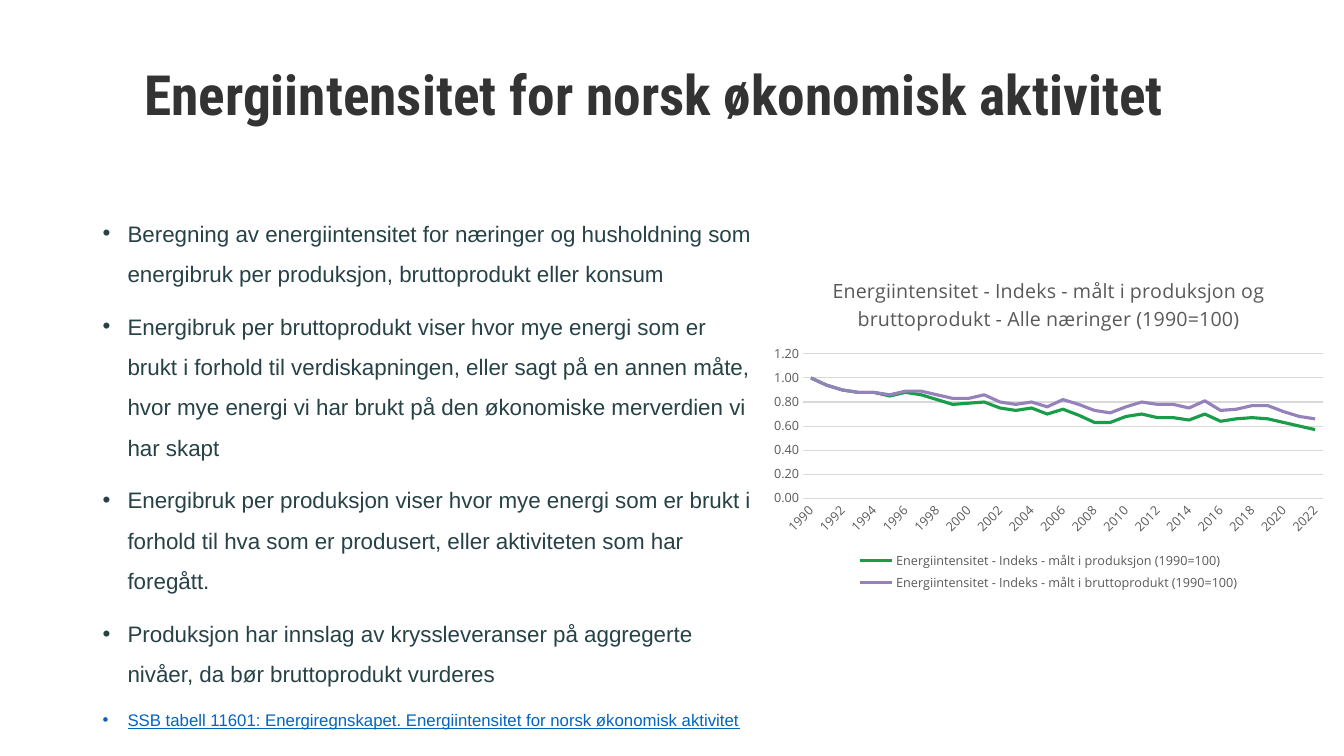
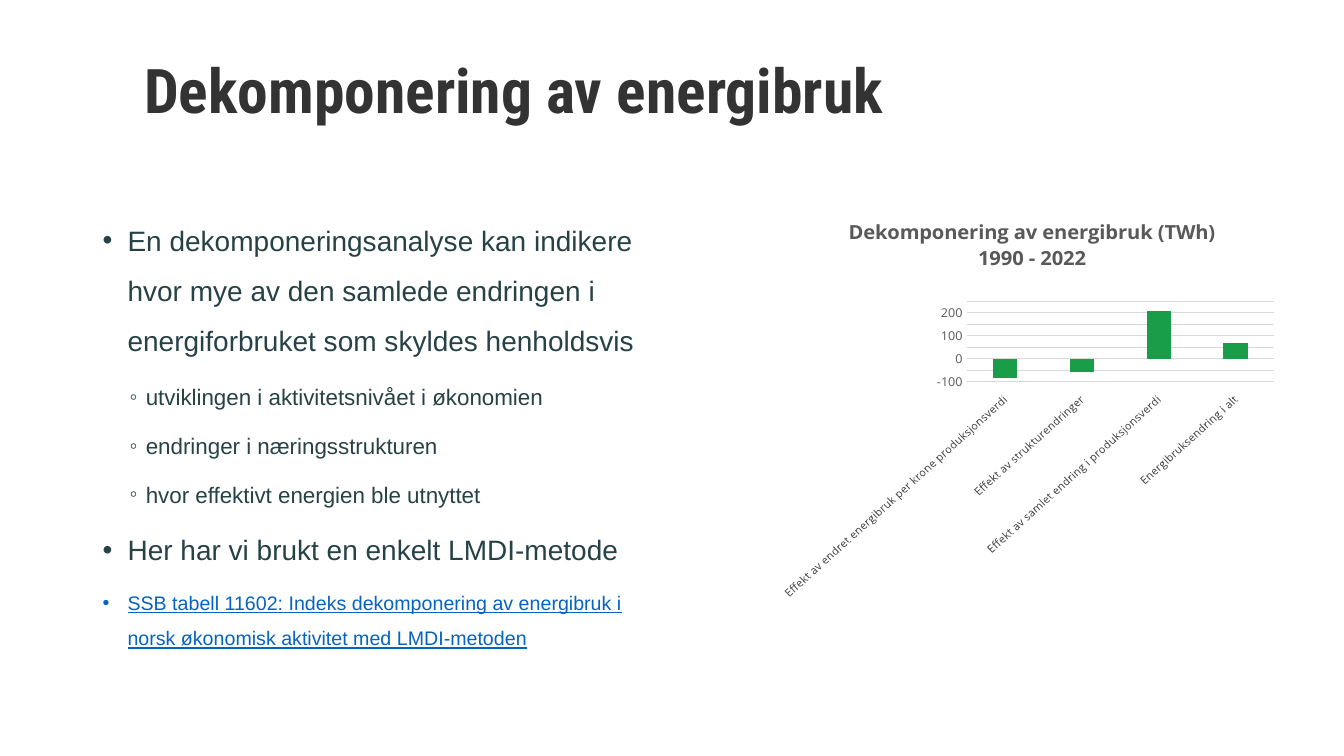
from dataclasses import dataclass

from lxml import etree
from pptx import Presentation
from pptx.chart.axis import _BaseAxis
from pptx.chart.chart import Chart
from pptx.chart.data import CategoryChartData
from pptx.dml.color import RGBColor
from pptx.enum.chart import XL_CHART_TYPE, XL_LEGEND_POSITION, XL_TICK_LABEL_POSITION, XL_TICK_MARK
from pptx.enum.text import MSO_ANCHOR, MSO_AUTO_SIZE, PP_ALIGN
from pptx.oxml.ns import qn
from pptx.slide import Slide
from pptx.util import Cm, Pt

LINE = XL_CHART_TYPE.LINE
COLUMN = XL_CHART_TYPE.COLUMN_CLUSTERED
BOTTOM = XL_LEGEND_POSITION.BOTTOM
LABELS_LOW = XL_TICK_LABEL_POSITION.LOW
LABELS_NEXT = XL_TICK_LABEL_POSITION.NEXT_TO_AXIS
NO_TICK = XL_TICK_MARK.NONE
TOP = MSO_ANCHOR.TOP
NO_FIT = MSO_AUTO_SIZE.NONE
LEFT = PP_ALIGN.LEFT

TITLE_FONT, BODY_FONT, CHART_FONT = "Roboto Condensed", "Arial", "Open Sans"
TITLE_INK, BODY_INK, LINK_INK = "333333", "274247", "0563C1"
CHART_INK, GRID_INK = "595959", "D9D9D9"
GREEN, PURPLE = "1A9D49", "9582BB"
DEGREE = 60000

Box = tuple[float, float, float, float]


@dataclass(frozen=True)
class Level:
    bullet: str
    margin: float
    hanging: float
    after: int


@dataclass(frozen=True)
class Point:
    text: str
    size: int
    level: int = 0
    link: bool = False


@dataclass(frozen=True)
class Series:
    name: str
    values: tuple[float, ...]
    ink: str


@dataclass(frozen=True)
class Figure:
    kind: int
    box: Box
    plot: Box
    title: tuple[str, ...]
    title_size: float
    categories: tuple[str, ...]
    series: tuple[Series, ...]
    scale: tuple[float, float, float]
    number_format: str
    category_size: int
    category_angle: int
    category_position: int
    title_bold: bool = False


@dataclass(frozen=True)
class Page:
    title: str
    title_size: float
    title_inset: float
    body_width: float
    points: tuple[Point, ...]
    figure: Figure


LEVELS = (Level("•", 0.63, 0.63, 9), Level("◦", 1.09, 0.41, 6))

PAGES = (
    Page(
        "Energiintensitet for norsk økonomisk aktivitet", 39.6, 0.18, 17.09,
        (
            Point("Beregning av energiintensitet for næringer og husholdning som energibruk per "
                  "produksjon, bruttoprodukt eller konsum", 16),
            Point("Energibruk per bruttoprodukt viser hvor mye energi som er brukt i forhold til "
                  "verdiskapningen, eller sagt på en annen måte, hvor mye energi vi har brukt på den "
                  "økonomiske merverdien vi har skapt", 16),
            Point("Energibruk per produksjon viser hvor mye energi som er brukt i forhold til hva som "
                  "er produsert, eller aktiviteten som har foregått.", 16),
            Point("Produksjon har innslag av kryssleveranser på aggregerte nivåer, da bør "
                  "bruttoprodukt vurderes", 16),
            Point("SSB tabell 11601: Energiregnskapet. Energiintensitet for norsk økonomisk aktivitet",
                  12, link=True),
        ),
        Figure(
            LINE, (19.23, 6.55, 14.4, 8.46), (0.07, 0.28, 0.91, 0.43),
            ("Energiintensitet - Indeks - målt i produksjon og bruttoprodukt - Alle næringer (1990=100)",),
            14, tuple(str(year) for year in range(1990, 2023)),
            (
                Series("Energiintensitet - Indeks - målt i produksjon (1990=100)",
                       (1, 0.94, 0.9, 0.88, 0.88, 0.85, 0.88, 0.86, 0.82, 0.78, 0.79, 0.8, 0.75, 0.73,
                        0.75, 0.7, 0.74, 0.69, 0.63, 0.63, 0.68, 0.7, 0.67, 0.67, 0.65, 0.7, 0.64,
                        0.66, 0.67, 0.66, 0.63, 0.6, 0.57), GREEN),
                Series("Energiintensitet - Indeks - målt i bruttoprodukt (1990=100)",
                       (1, 0.94, 0.9, 0.88, 0.88, 0.86, 0.89, 0.89, 0.86, 0.83, 0.83, 0.86, 0.8, 0.78,
                        0.8, 0.76, 0.82, 0.78, 0.73, 0.71, 0.76, 0.8, 0.78, 0.78, 0.75, 0.81, 0.73,
                        0.74, 0.77, 0.77, 0.72, 0.68, 0.66), PURPLE),
            ),
            (0, 1.2, 0.2), "0.00", 9, -45, LABELS_NEXT,
        ),
    ),
    Page(
        "Dekomponering av energibruk", 44, 0, 14.4,
        (
            Point("En dekomponeringsanalyse kan indikere hvor mye av den samlede endringen i "
                  "energiforbruket som skyldes henholdsvis", 20),
            Point("utviklingen i aktivitetsnivået i økonomien", 16, 1),
            Point("endringer i næringsstrukturen", 16, 1),
            Point("hvor effektivt energien ble utnyttet", 16, 1),
            Point("Her har vi brukt en enkelt LMDI-metode", 20),
            Point("SSB tabell 11602: Indeks dekomponering av energibruk i norsk økonomisk aktivitet "
                  "med LMDI-metoden", 14, link=True),
        ),
        Figure(
            COLUMN, (19.66, 5.08, 12.7, 10.03), (0.37, 0.26, 0.61, 0.21),
            ("Dekomponering av energibruk (TWh)", "1990 - 2022"), 14.4,
            ("Effekt av endret energibruk per krone produksjonsverdi", "Effekt av strukturendringer",
             "Effekt av samlet endring i produksjonsverdi", "Energibruksendring i alt"),
            (Series("Series 1", (-83, -58, 210, 68), GREEN),),
            (-100, 250, 50), "0", 8, -43, LABELS_LOW, True,
        ),
    ),
)


def color(value: str) -> RGBColor:
    return RGBColor.from_string(value)


def style_font(font, *, name: str, size: float, ink: str, bold: bool = False,
               underline: bool = False) -> None:
    font.name, font.size, font.bold, font.underline = name, Pt(size), bold, underline
    font.color.rgb = color(ink)


def write(paragraph, text: str, **style) -> None:
    run = paragraph.add_run()
    run.text = text
    style_font(run.font, **style)


def place(shape, box: Box) -> None:
    shape.left, shape.top, shape.width, shape.height = map(Cm, box)


def add_bullet(paragraph, level: Level) -> None:
    properties = paragraph._p.get_or_add_pPr()
    properties.set("marL", str(Cm(level.margin)))
    properties.set("indent", str(-Cm(level.hanging)))
    etree.SubElement(properties, qn("a:buChar")).set("char", level.bullet)


def prepare(placeholder, box: Box):
    place(placeholder, box)
    frame = placeholder.text_frame
    frame.word_wrap, frame.auto_size, frame.vertical_anchor = True, NO_FIT, TOP
    return frame


def add_title(slide: Slide, page: Page) -> None:
    frame = prepare(slide.shapes.title, (3.38, 1.52, 26.82, 3.63))
    frame.margin_top = Cm(page.title_inset)
    heading = frame.paragraphs[0]
    heading.alignment, heading.line_spacing = LEFT, 0.9
    write(heading, page.title, name=TITLE_FONT, size=page.title_size, ink=TITLE_INK, bold=True)


def add_points(slide: Slide, page: Page) -> None:
    frame = prepare(slide.placeholders[1], (2.33, 5.07, page.body_width, 11.4))
    for index, point in enumerate(page.points):
        paragraph = frame.add_paragraph() if index else frame.paragraphs[0]
        level = LEVELS[point.level]
        paragraph.level = point.level
        add_bullet(paragraph, level)
        paragraph.line_spacing = 1.5
        paragraph.space_before, paragraph.space_after = Pt(0), Pt(level.after)
        write(paragraph, point.text, name=BODY_FONT, size=point.size,
              ink=LINK_INK if point.link else BODY_INK, underline=point.link)


def fix_plot(chart: Chart, plot: Box) -> None:
    area = chart.element.xpath("c:chart/c:plotArea")[0]
    for previous in area.findall(qn("c:layout")):
        area.remove(previous)
    layout = etree.Element(qn("c:layout"))
    area.insert(0, layout)
    manual = etree.SubElement(layout, qn("c:manualLayout"))
    settings = (("layoutTarget", "inner"), ("xMode", "edge"), ("yMode", "edge"),
                *zip("xywh", map(str, plot)))
    for tag, value in settings:
        etree.SubElement(manual, qn(f"c:{tag}")).set("val", value)


def style_axis(axis: _BaseAxis, size: int) -> None:
    axis.major_tick_mark = axis.minor_tick_mark = NO_TICK
    style_font(axis.tick_labels.font, name=CHART_FONT, size=size, ink=CHART_INK)


def style_line(line, ink: str, width: float) -> None:
    line.color.rgb, line.width = color(ink), Pt(width)


def style_axes(chart: Chart, figure: Figure) -> None:
    categories, values = chart.category_axis, chart.value_axis
    style_axis(categories, figure.category_size)
    style_axis(values, 9)
    categories.has_major_gridlines = False
    categories.tick_label_position = figure.category_position
    style_line(categories.format.line, GRID_INK, 0.75)
    label_body = chart.element.xpath(".//c:catAx/c:txPr/a:bodyPr")[0]
    label_body.set("rot", str(figure.category_angle * DEGREE))
    values.minimum_scale, values.maximum_scale, values.major_unit = figure.scale
    values.has_major_gridlines = True
    style_line(values.major_gridlines.format.line, GRID_INK, 0.75)
    values.format.line.fill.background()
    values.tick_labels.number_format = figure.number_format
    values.tick_labels.number_format_is_linked = False


def add_figure(slide: Slide, figure: Figure) -> None:
    data = CategoryChartData(number_format=figure.number_format)
    data.categories = figure.categories
    for series in figure.series:
        data.add_series(series.name, series.values)
    chart = slide.shapes.add_chart(figure.kind, *map(Cm, figure.box), data).chart
    style_font(chart.font, name=CHART_FONT, size=10, ink="000000")
    chart.has_title = True
    frame = chart.chart_title.text_frame
    for index, text in enumerate(figure.title):
        paragraph = frame.add_paragraph() if index else frame.paragraphs[0]
        write(paragraph, text, name=CHART_FONT, size=figure.title_size, ink=CHART_INK,
              bold=figure.title_bold)
    style_axes(chart, figure)
    fix_plot(chart, figure.plot)
    plot = chart.plots[0]
    plot.vary_by_categories = False
    chart.has_legend = figure.kind == LINE
    if chart.has_legend:
        chart.legend.position, chart.legend.include_in_layout = BOTTOM, False
        style_font(chart.legend.font, name=CHART_FONT, size=9, ink=CHART_INK)
    else:
        plot.gap_width, plot.overlap = 219, -27
    for drawn, series in zip(plot.series, figure.series):
        if figure.kind == LINE:
            drawn.smooth = False
            style_line(drawn.format.line, series.ink, 2.25)
        else:
            drawn.invert_if_negative = False
            drawn.format.fill.solid()
            drawn.format.fill.fore_color.rgb = color(series.ink)


def main() -> None:
    deck = Presentation()
    deck.slide_width, deck.slide_height = Cm(33.87), Cm(19.05)
    for page in PAGES:
        slide = deck.slides.add_slide(deck.slide_layouts[1])
        add_title(slide, page)
        add_points(slide, page)
        add_figure(slide, page.figure)
    deck.save("out.pptx")


if __name__ == "__main__":
    main()
